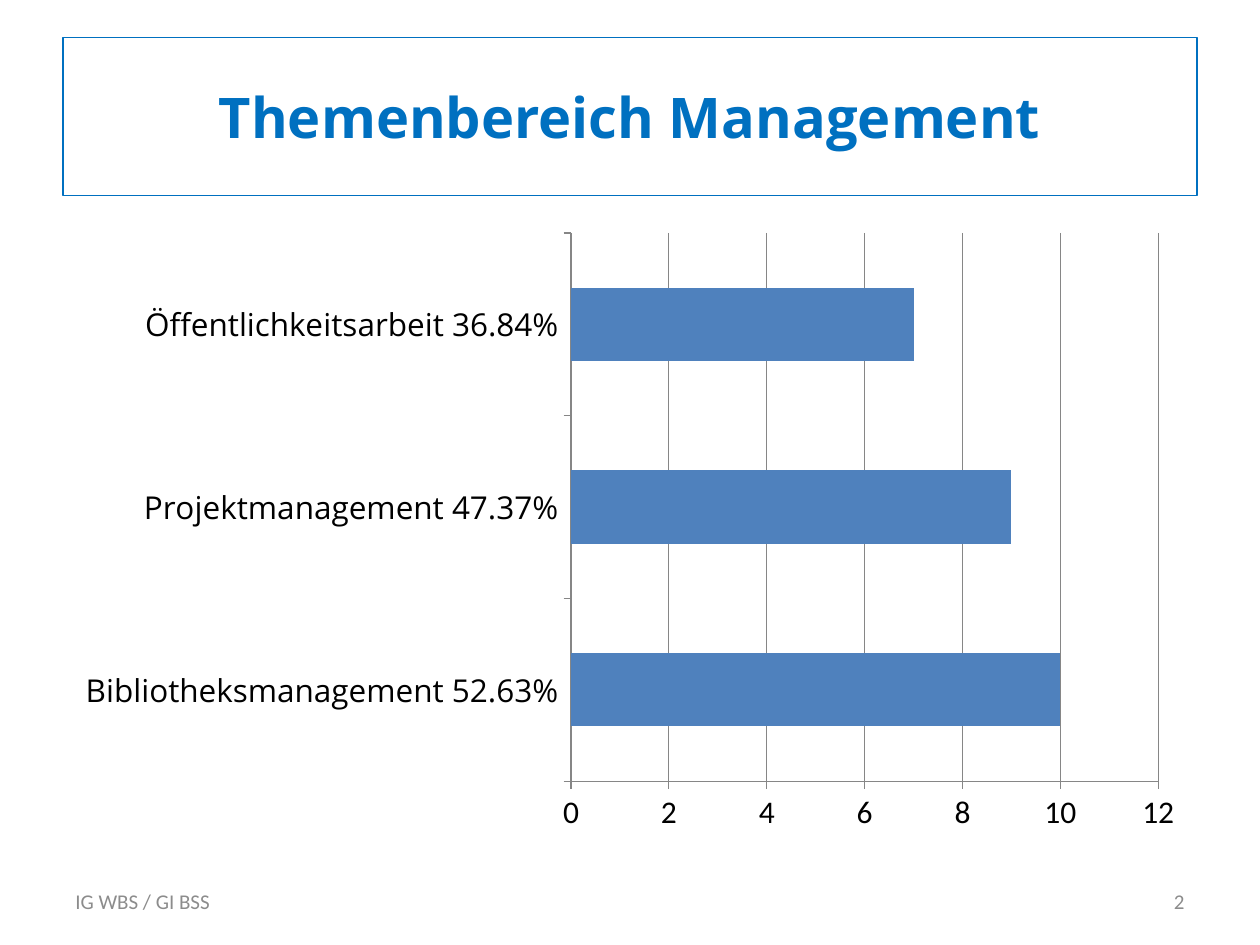
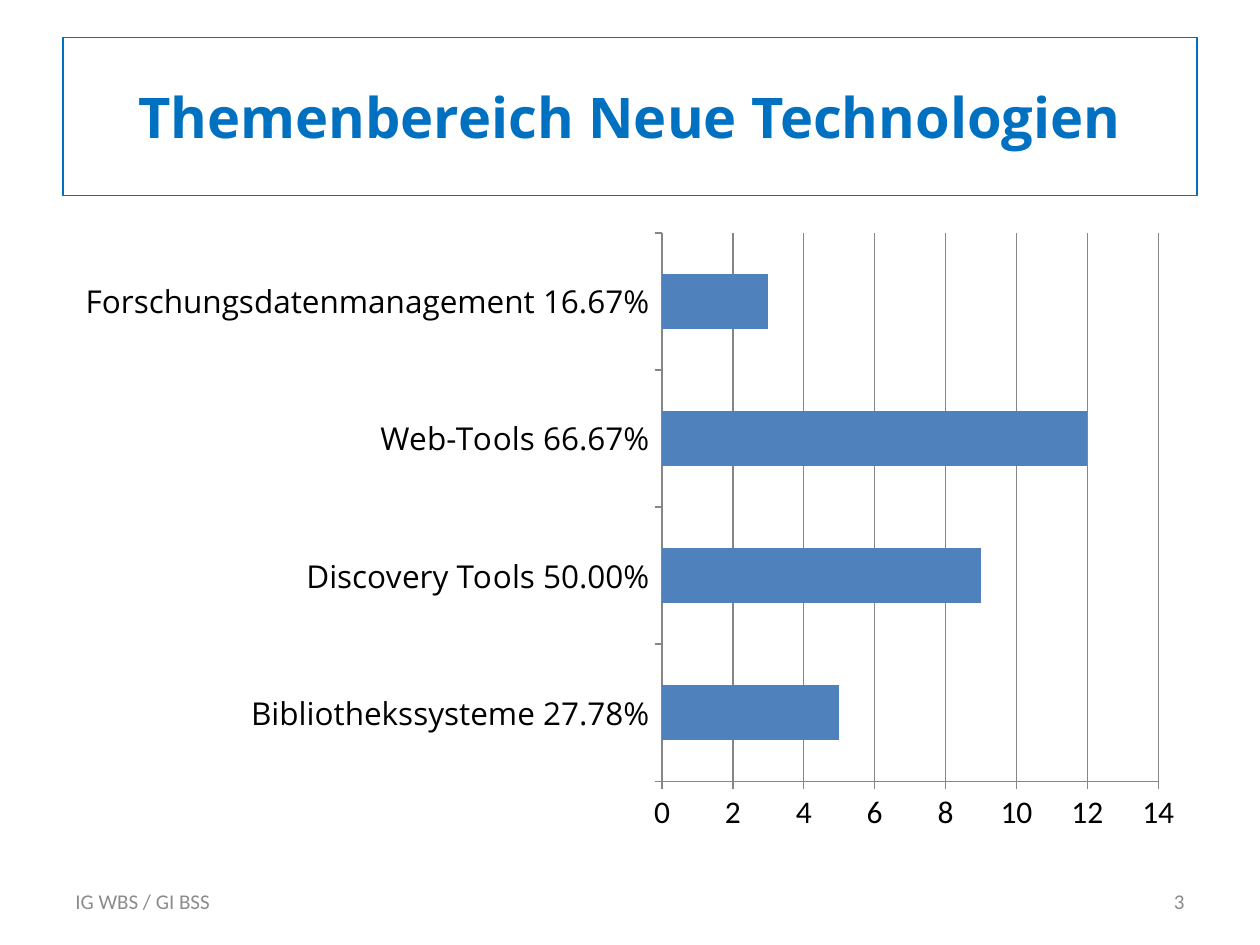
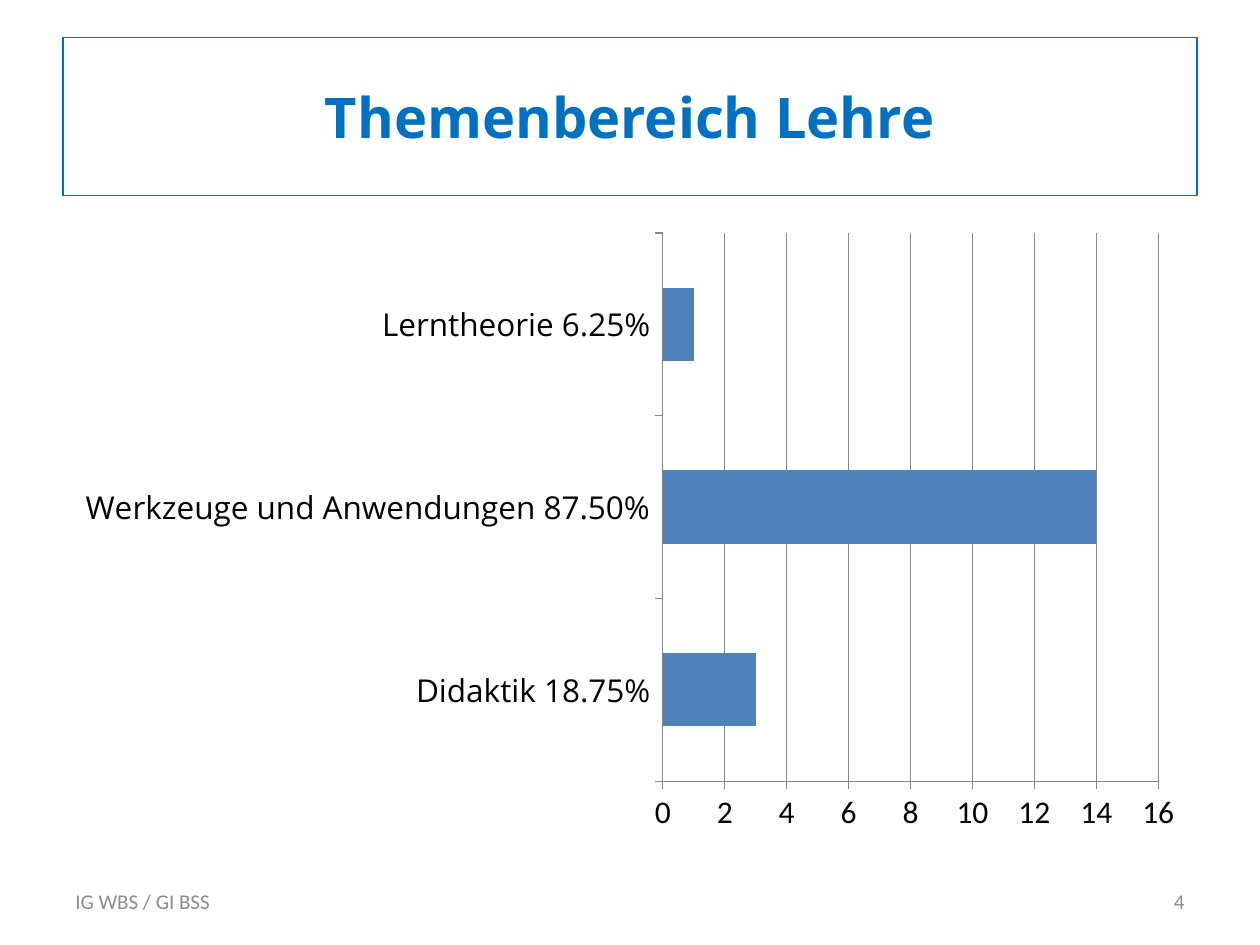
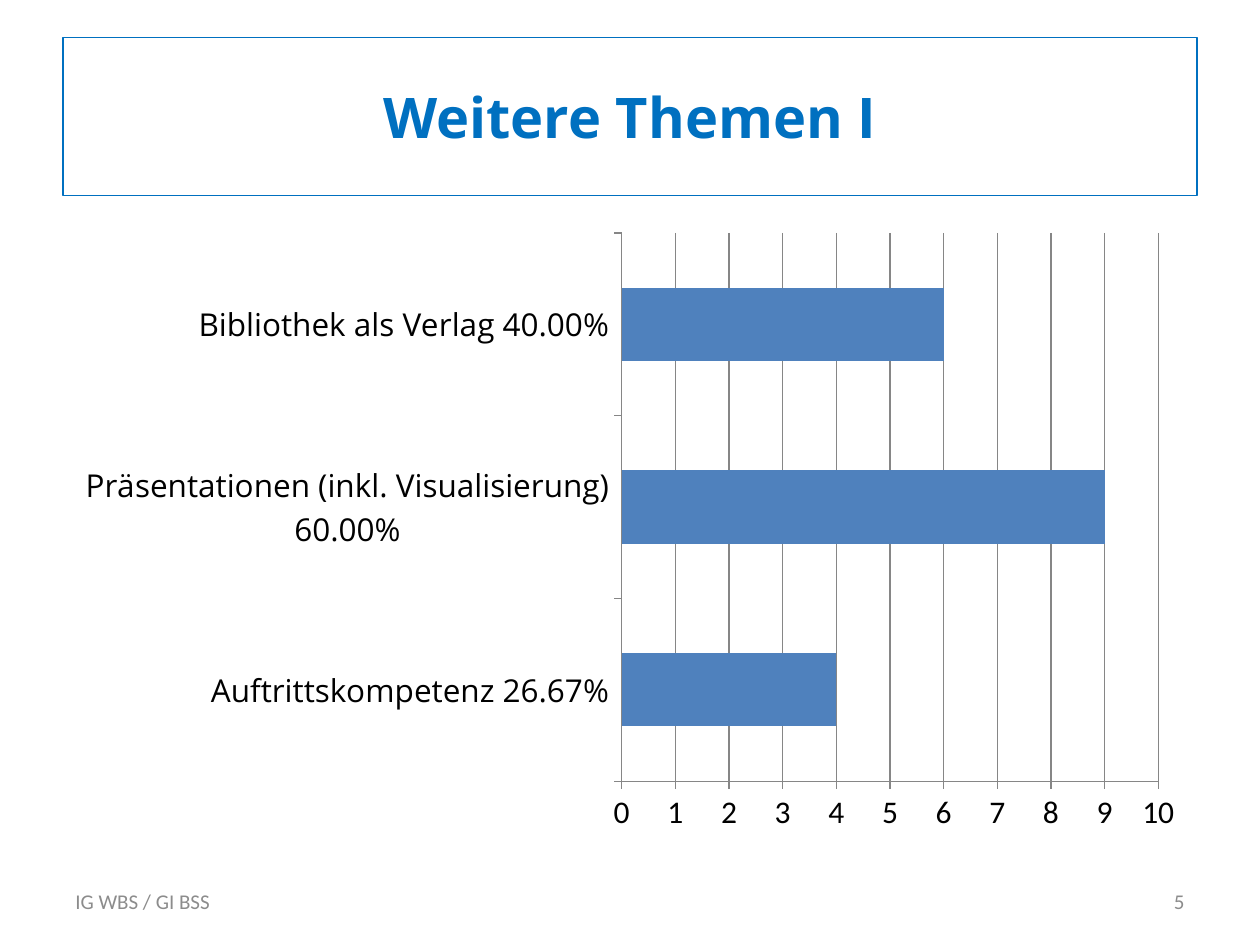
"""Build four survey slides, each with one bar chart."""
from pptx import Presentation
from pptx.chart.data import CategoryChartData
from pptx.dml.color import RGBColor
from pptx.enum.chart import XL_CHART_TYPE, XL_TICK_MARK
from pptx.enum.text import MSO_ANCHOR, PP_ALIGN
from pptx.util import Pt

BAR = XL_CHART_TYPE.BAR_CLUSTERED
OUT, NONE = XL_TICK_MARK.OUTSIDE, XL_TICK_MARK.NONE
MID = MSO_ANCHOR.MIDDLE
LEFT, MIDDLE, RIGHT = PP_ALIGN.LEFT, PP_ALIGN.CENTER, PP_ALIGN.RIGHT

TOPICS = [
    ("Themenbereich Management", [
        ("Bibliotheksmanagement 52.63%", 10),
        ("Projektmanagement 47.37%", 9),
        ("Öffentlichkeitsarbeit 36.84%", 7),
    ]),
    ("Themenbereich Neue Technologien", [
        ("Bibliothekssysteme 27.78%", 5),
        ("Discovery Tools 50.00%", 9),
        ("Web-Tools 66.67%", 12),
        ("Forschungsdatenmanagement 16.67%", 3),
    ]),
    ("Themenbereich Lehre", [
        ("Didaktik 18.75%", 3),
        ("Werkzeuge und Anwendungen 87.50%", 14),
        ("Lerntheorie 6.25%", 1),
    ]),
    ("Weitere Themen I", [
        ("Auftrittskompetenz 26.67%", 4),
        ("Präsentationen (inkl. Visualisierung) 60.00%", 9),
        ("Bibliothek als Verlag 40.00%", 6),
    ]),
]
FOOTER = "IG WBS / GI BSS"
FIRST = 2

PX = 9144
WIDE, HIGH, EDGE = 1000, 750, 50
SPAN = WIDE - 2 * EDGE
TITLE_BOX = (EDGE, 30, SPAN, 125)
CHART_BOX = (EDGE, 175, SPAN, 495)
NOTE_W, NOTE_Y, NOTE_H = 233, 695, 40

BLUE, FILL, BLACK = "0070C0", "4F81BD", "000000"
RULE, GREY = "868686", "8C8C8C"
HEAD, BODY = "Open Sans", "Calibri"


def tint(code):
    """Turn a hex string into a colour."""
    return RGBColor.from_string(code)


def scale(box):
    """Turn px lengths into EMU."""
    return [n * PX for n in box]


def style(font, face, size, code, bold=False):
    """Set face, size, colour and weight of a font."""
    font.name, font.size, font.bold = face, Pt(size), bold
    font.color.rgb = tint(code)


def write(shape, text, align, *look):
    """Put one styled run into a shape."""
    frame = shape.text_frame
    frame.word_wrap = True
    frame.vertical_anchor = MID
    para = frame.paragraphs[0]
    para.alignment = align
    run = para.add_run()
    run.text = text
    style(run.font, *look)


def add_title(slide, text):
    """Place and frame the title."""
    shape = slide.shapes.title
    shape.left, shape.top, shape.width, shape.height = scale(TITLE_BOX)
    shape.line.color.rgb = tint(BLUE)
    shape.line.width = Pt(0.75)
    write(shape, text, MIDDLE, HEAD, 32, BLUE, True)


def draw_line(line):
    """Give a chart line its grey rule."""
    line.color.rgb = tint(RULE)
    line.width = Pt(0.75)


def add_bars(slide, rows):
    """Draw the bar chart of one topic."""
    data = CategoryChartData()
    data.categories = [name for name, _ in rows]
    data.add_series("Series 1", [count for _, count in rows])
    chart = slide.shapes.add_chart(BAR, *scale(CHART_BOX), data).chart
    chart.has_title = chart.has_legend = False
    style(chart.font, BODY, 18, BLACK)
    plot = chart.plots[0]
    plot.gap_width = 150
    plot.vary_by_categories = False
    fill = plot.series[0].format.fill
    fill.solid()
    fill.fore_color.rgb = tint(FILL)
    for axis, face in ((chart.category_axis, HEAD), (chart.value_axis, BODY)):
        axis.major_tick_mark, axis.minor_tick_mark = OUT, NONE
        draw_line(axis.format.line)
        style(axis.tick_labels.font, face, 18, BLACK)
    chart.value_axis.has_major_gridlines = True
    draw_line(chart.value_axis.major_gridlines.format.line)


def add_notes(slide, page):
    """Add the footer and the page number."""
    right = WIDE - EDGE - NOTE_W
    for left, text, align in ((EDGE, FOOTER, LEFT), (right, str(page), RIGHT)):
        box = slide.shapes.add_textbox(*scale((left, NOTE_Y, NOTE_W, NOTE_H)))
        write(box, text, align, BODY, 12, GREY)


def main():
    """Build and save the deck."""
    deck = Presentation()
    deck.slide_width, deck.slide_height = scale((WIDE, HIGH))
    for page, (title, rows) in enumerate(TOPICS, FIRST):
        slide = deck.slides.add_slide(deck.slide_layouts[5])
        add_title(slide, title)
        add_bars(slide, rows)
        add_notes(slide, page)
    deck.save("out.pptx")


if __name__ == "__main__":
    main()
